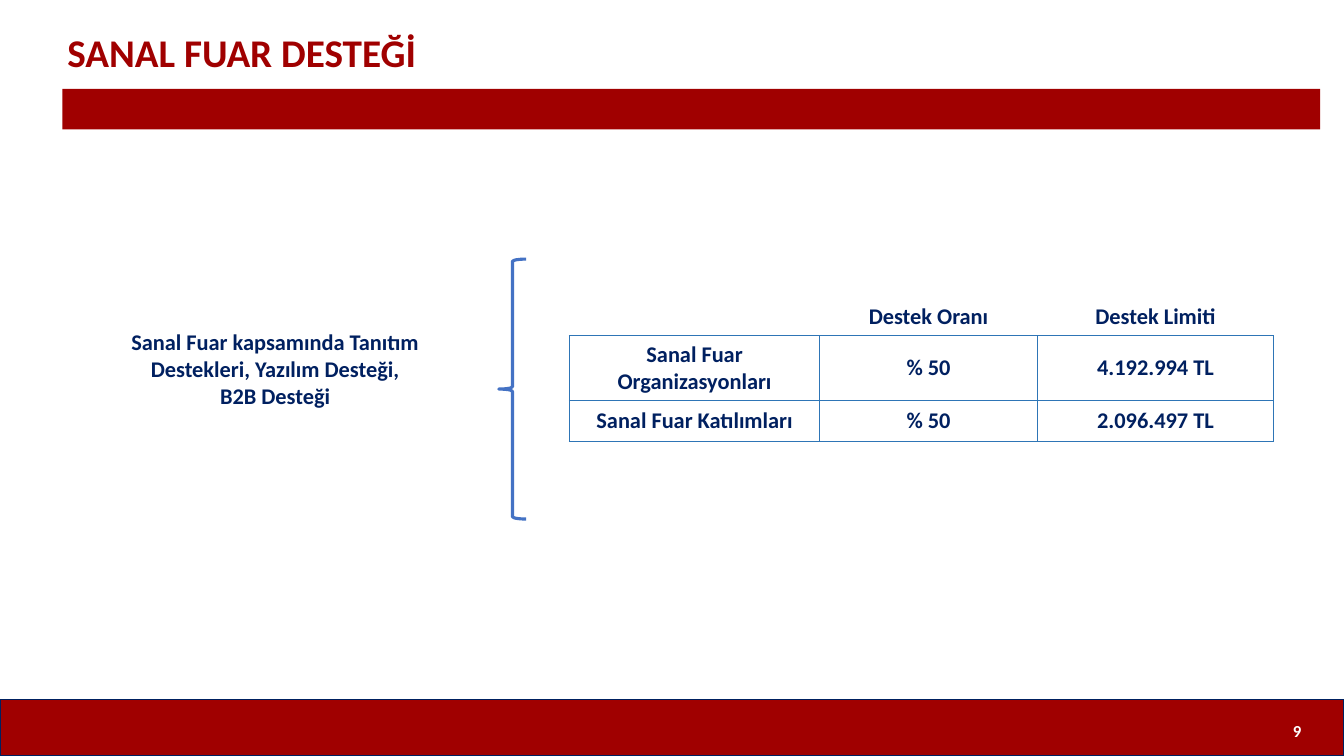
from pptx import Presentation
from pptx.dml.color import RGBColor
from pptx.enum.shapes import MSO_SHAPE
from pptx.enum.text import MSO_ANCHOR, PP_ALIGN
from pptx.oxml import parse_xml
from pptx.oxml.ns import nsdecls
from pptx.util import Cm, Pt

RED, NAVY, WHITE = "A00000", "002060", "FFFFFF"
BLUE, EDGE = "4472C4", "2E75B6"


def color(code):
    """Turn a hex string into a colour."""
    return RGBColor.from_string(code)


class Deck:
    """Hold the style and the current slide."""

    def __init__(self, font):
        """Start a wide deck with one blank slide."""
        self.font = font
        self.deck = Presentation()
        self.deck.slide_width, self.deck.slide_height = Cm(33.87), Cm(19.05)
        self.slide = self.deck.slides.add_slide(self.deck.slide_layouts[6])

    def label(self, frame, lines, size, ink, align=PP_ALIGN.CENTER):
        """Fill a text frame with bold lines."""
        frame.word_wrap = True
        for i, line in enumerate(lines):
            para = frame.add_paragraph() if i else frame.paragraphs[0]
            para.text = line
            para.alignment = align
            font = para.font
            font.name, font.size, font.bold = self.font, Pt(size), True
            font.color.rgb = color(ink)
        return frame

    def shape(self, kind, box, fill=None, line=None, width=1):
        """Add a preset shape."""
        item = self.slide.shapes.add_shape(kind, *map(Cm, box))
        item.shadow.inherit = False
        if fill:
            item.fill.solid()
            item.fill.fore_color.rgb = color(fill)
        else:
            item.fill.background()
        if line:
            item.line.color.rgb = color(line)
            item.line.width = Pt(width)
        else:
            item.line.fill.background()
        return item

    def text(self, box, lines, size, ink, align=PP_ALIGN.CENTER):
        """Add a text box and return its frame."""
        item = self.slide.shapes.add_textbox(*map(Cm, box))
        return self.label(item.text_frame, lines, size, ink, align)

    def border(self, cell, sides):
        """Draw the named cell sides and hide the others."""
        props = cell._tc.get_or_add_tcPr()
        for i, side in enumerate("LRTB"):
            paint = "<a:noFill/>"
            if side in sides:
                paint = f'<a:solidFill><a:srgbClr val="{EDGE}"/></a:solidFill>'
            props.insert(i, parse_xml(
                f'<a:ln{side} {nsdecls("a")} w="{Pt(1)}">{paint}</a:ln{side}>'))

    def table(self, spot, cols, rows, data):
        """Add a table whose header has only a lower border."""
        size = sum(cols), sum(rows)
        grid = self.slide.shapes.add_table(
            len(rows), len(cols), *map(Cm, (*spot, *size))).table
        grid.first_row = grid.horz_banding = False
        for col, width in zip(grid.columns, cols):
            col.width = Cm(width)
        for r, (row, high) in enumerate(zip(data, rows)):
            grid.rows[r].height = Cm(high)
            for c, words in enumerate(row):
                cell = grid.cell(r, c)
                cell.fill.background()
                cell.vertical_anchor = MSO_ANCHOR.MIDDLE
                cell.margin_top = cell.margin_bottom = 0
                self.label(cell.text_frame, [words], 16, NAVY)
                self.border(cell, "LRTB" if r else "B")


def main():
    """Build and save the slide."""
    deck = Deck("Calibri")
    deck.shape(MSO_SHAPE.RECTANGLE, (0, 17.63, 33.87, 1.42), RED, NAVY)
    page = deck.shape(MSO_SHAPE.ROUND_2_SAME_RECTANGLE, (32.08, 17.63, 1.22, 1.5))
    deck.label(page.text_frame, ["9"], 12, WHITE)
    page.text_frame.vertical_anchor = MSO_ANCHOR.MIDDLE

    deck.shape(MSO_SHAPE.RECTANGLE, (1.57, 2.24, 31.7, 1.02), RED)
    title = deck.text((1.57, 0, 19.79, 2.74), ["SANAL FUAR DESTEĞİ"],
                      28, RED, PP_ALIGN.LEFT)
    title.vertical_anchor = MSO_ANCHOR.MIDDLE
    title.margin_left = title.margin_right = Cm(0.13)
    title.paragraphs[0].line_spacing = 0.9

    deck.table((14.35, 7.52), (6.31, 5.48, 5.96), (0.94, 1.63, 1.04), [
        ("", "Destek Oranı", "Destek Limiti"),
        ("Sanal Fuar Organizasyonları", "% 50", "4.192.994 TL"),
        ("Sanal Fuar Katılımları", "% 50", "2.096.497 TL"),
    ])
    deck.text((2.39, 8.15, 9.09, 3.07), [
        "Sanal Fuar kapsamında Tanıtım Destekleri, Yazılım Desteği,",
        "B2B Desteği",
    ], 16, NAVY)
    deck.shape(MSO_SHAPE.LEFT_BRACE, (12.57, 6.53, 0.69, 6.55), line=BLUE, width=2.25)
    deck.deck.save("out.pptx")


if __name__ == "__main__":
    main()
